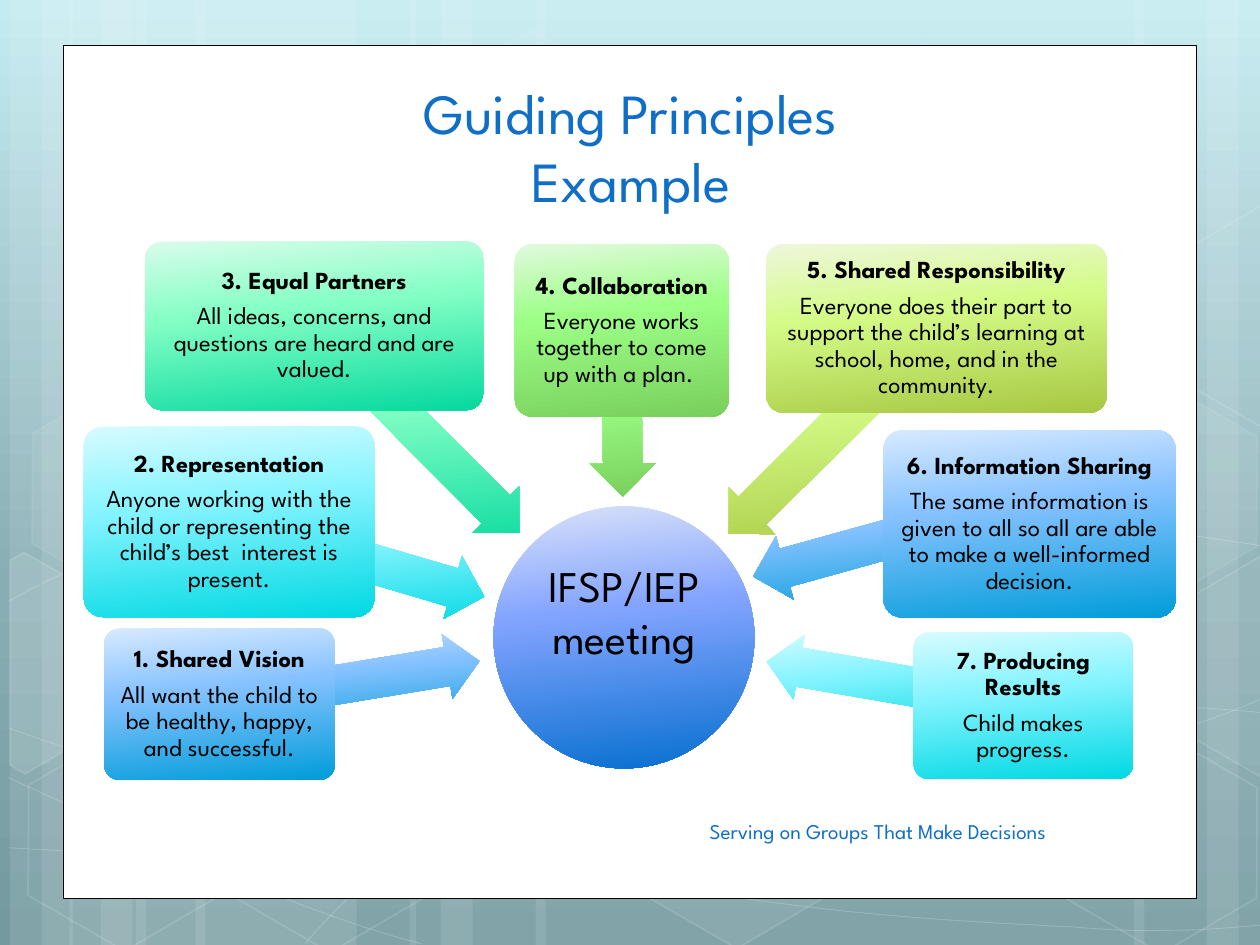
from dataclasses import dataclass
from math import cos, radians, sin

from lxml import etree
from pptx import Presentation
from pptx.dml.color import RGBColor
from pptx.enum.shapes import MSO_SHAPE
from pptx.enum.text import MSO_ANCHOR, MSO_AUTO_SIZE, PP_ALIGN
from pptx.oxml.ns import qn
from pptx.util import Cm, Pt

RECT, ROUND, OVAL = MSO_SHAPE.RECTANGLE, MSO_SHAPE.ROUNDED_RECTANGLE, MSO_SHAPE.OVAL
ARROW, HEX = MSO_SHAPE.LEFT_ARROW, MSO_SHAPE.HEXAGON
MIDDLE, BOTTOM = MSO_ANCHOR.MIDDLE, MSO_ANCHOR.BOTTOM
CENTER, FIXED = PP_ALIGN.CENTER, MSO_AUTO_SIZE.NONE


@dataclass(frozen=True)
class Theme:
    font: str = "League Spartan"
    white: str = "FFFFFF"
    ink: str = "000000"
    accent: str = "0F6FC6"
    sky: tuple = ((0, "C4EBF1"), (62, "88ADB3"), (100, "749AA0"))
    hub: tuple = ((0, "DAE2F9"), (40, "82A4FF"), (100, "066FCF"))
    blue: tuple = ((0, "D7EAFF"), (40, "86C2FF"), (100, "009DD9"))
    aqua: tuple = ((0, "D7FBFF"), (40, "86F4FF"), (100, "01D9E3"))
    mint: tuple = ((0, "D9FCEB"), (40, "84FFC5"), (100, "06D99F"))
    green: tuple = ((0, "E2F9DE"), (40, "9CFF86"), (100, "79CF5D"))
    lime: tuple = ((0, "EEF7DC"), (40, "D4FB87"), (100, "A8C843"))
    title: float = 32.4
    core: float = 25
    body: float = 14
    note: float = 12


T = Theme()
TILT = 30

BARS = [(2.74, 4.45), (0.2, 1.27), (0.84, 2.11), (3.94, 4.45), (1.4, 1.27), (2.03, 2.11),
        (18.62, 4.45), (24.33, 1.27), (22.86, 2.11), (10.8, 7.82), (8.26, 1.27), (8.89, 2.11)]

CURVES = [
    [(0.18, 17.09), (1.55, 17.17), (2.92, 17.25), (4.83, 17.22), (6.73, 17.2), (9.09, 17.15),
     (11.63, 16.89), (14.17, 16.64), (17.78, 16.15), (20.12, 15.67), (22.43, 15.19),
     (24.82, 14.43), (25.58, 14)],
    [(0.18, 12.12), (0.91, 11.71), (1.65, 11.33), (3.07, 10.95), (4.52, 10.57), (6.58, 10.01),
     (8.81, 9.83), (11.07, 9.65), (13.82, 9.63), (16.61, 9.83), (19.41, 10.03),
     (24.05, 10.82), (25.58, 11.02)],
    [(0.15, 15.67), (3.23, 17.07), (6.27, 18.47), (8.48, 19.02)],
    [(0.18, 14.68), (0.97, 14.96), (1.78, 15.24), (3.25, 15.65), (4.72, 16.03), (6.93, 16.66),
     (9.07, 17.09), (11.18, 17.53), (13.84, 17.98), (15.95, 18.24), (18.06, 18.52),
     (20.32, 18.62), (21.67, 18.69), (22.99, 18.8), (23.34, 18.75), (24, 18.75),
     (24.66, 18.72), (25.12, 18.67), (25.58, 18.64)],
    [(6.15, 19.02), (6.6, 18.52), (7.06, 18.01), (7.67, 17.55), (8.28, 17.09), (9.14, 16.59),
     (9.86, 16.23), (10.57, 15.88), (11, 15.72), (11.94, 15.47), (12.85, 15.21),
     (14.55, 14.86), (15.44, 14.68), (16.36, 14.5), (16.48, 14.5), (17.27, 14.45),
     (18.06, 14.38), (19.3, 14.3), (20.17, 14.27), (21.06, 14.25), (22.5, 14.27),
     (22.5, 14.27), (22.5, 14.27), (24.21, 14.27), (24.21, 14.27), (24.66, 14.3),
     (25.1, 14.33), (25.55, 14.38)],
]

CELLS = [(8.48, 0.91, 4, 8), (12.62, 14.96, 6, 12), (0.28, 15.01, 0, 12), (0.36, 7.92, 7, 8),
         (4.42, 15.04, 0, 12), (19.13, 11.51, 10, 12), (21.18, 15.06, 0, 12),
         (21.18, 7.98, 7, 8)]

LEFT = [(0.2, 11.3), (0.48, 11.13), (2.44, 12.24), (2.41, 14.48), (0.51, 15.6), (0.2, 15.42)]
RIGHT = [(23.52, 12.32), (25.43, 11.2), (25.63, 11.33), (25.63, 15.57), (25.45, 15.67),
         (23.52, 14.55)]
CUTS = [(LEFT, (0.91, 13.59), 0, 10), (RIGHT, (25.02, 13.21), 0, 4),
        (RIGHT, (25.02, 13.21), -7.06, 0)]

TOPICS = [
    ("1. Shared Vision", "All want the child to be healthy, happy, and successful.",
     (0.41, 7.8, 4.65, 3.05), (2.7, 8.23, 5.31, 170.6), T.blue),
    ("2. Representation",
     "Anyone working with the child or representing the child’s best  interest is present.",
     (0, 3.73, 5.86, 3.84), (2.82, 5.74, 5.36, 196.4), T.aqua),
    ("3. Equal Partners", "All ideas, concerns, and questions are heard and are valued.",
     (1.24, 0, 6.81, 3.4), (3.77, 3.13, 5.87, 225.1), T.mint),
    ("4. Collaboration", "Everyone works together to come up with a plan. ",
     (8.69, 0.05, 4.31, 3.48), (9.18, 2.8, 3.35, 269.6), T.green),
    ("5. Shared Responsibility",
     "Everyone does their part to support the child’s learning at school, home, "
     "and in the community.",
     (13.76, 0.05, 6.86, 3.4), (12.15, 3.16, 5.89, 315.3), T.lime),
    ("6. Information Sharing",
     "The same information is given to all so all are able to make a well-informed decision.",
     (16.12, 3.8, 5.89, 3.78), (13.4, 5.4, 5.18, 344.5), T.blue),
    ("7. Producing Results", "Child makes progress.",
     (16.73, 7.88, 4.42, 2.95), (13.73, 8.25, 5.23, 9.7), T.aqua),
]


def grade(fill, root, stops, angle):
    fill.gradient()
    node = next(root.iter(qn("a:gradFill")))
    node.set("rotWithShape", "0")
    node.find(qn("a:lin")).set("ang", str(angle * 60000))
    group = node.find(qn("a:gsLst"))
    group.clear()
    for pos, shade in stops:
        stop = etree.SubElement(group, qn("a:gs"), pos=str(pos * 1000))
        etree.SubElement(stop, qn("a:srgbClr"), val=shade)


def tint(shape, fill, pct):
    fill.solid()
    fill.fore_color.rgb = RGBColor.from_string(T.white)
    last = list(shape.element.spPr.iter(qn("a:srgbClr")))[-1]
    etree.SubElement(last, qn("a:alpha"), val=str(pct * 1000))


def veil(shape, fill, line=0, width=1):
    shape.shadow.inherit = False
    for part, pct in ((shape.fill, fill), (shape.line.fill, line)):
        if pct:
            tint(shape, part, pct)
        else:
            part.background()
    if line:
        shape.line.width = Pt(width)


def form(slide, kind, box, stops=None, adjust=()):
    shape = slide.shapes.add_shape(kind, *map(Cm, box))
    shape.shadow.inherit = False
    for i, value in enumerate(adjust):
        shape.adjustments[i] = value
    if stops:
        grade(shape.fill, shape.element.spPr, stops, 84)
        shape.line.fill.background()
    return shape


def trace(slide, points, close):
    start, *rest = [(Cm(x), Cm(y)) for x, y in points]
    pen = slide.shapes.build_freeform(*start)
    pen.add_line_segments(rest, close=close)
    return pen.convert_to_shape()


def curve(slide, points):
    shape = trace(slide, points, False)
    legs = list(shape.element.spPr.iter(qn("a:lnTo")))
    for i in range(0, len(legs), 3):
        bend = etree.Element(qn("a:cubicBezTo"))
        legs[i].addprevious(bend)
        for leg in legs[i:i + 3]:
            bend.append(leg[0])
            leg.getparent().remove(leg)
    return shape


def cut(slide, points, mid):
    c, s = cos(radians(TILT)), sin(radians(TILT))
    flat = [(mid[0] + (x - mid[0]) * c + (y - mid[1]) * s,
             mid[1] + (y - mid[1]) * c - (x - mid[0]) * s) for x, y in points]
    shape = trace(slide, flat, True)
    shape.rotation = TILT
    return shape


def write(frame, lines, size, color, anchor=MIDDLE, inset=None, bold=False):
    frame.word_wrap = True
    frame.auto_size = FIXED
    frame.vertical_anchor = anchor
    if inset is not None:
        frame.margin_left = frame.margin_right = Cm(inset)
        frame.margin_top = frame.margin_bottom = Cm(inset)
    frame.text = "\n".join(lines)
    for i, para in enumerate(frame.paragraphs):
        para.alignment = CENTER
        for run in para.runs:
            run.font.name = T.font
            run.font.size = Pt(size)
            run.font.bold = bold and i == 0
            run.font.color.rgb = RGBColor.from_string(color)


def scene(slide, box):
    left, top, width, height = box
    grade(slide.background.fill, slide.element, T.sky, 90)
    for x, wide in BARS:
        veil(form(slide, RECT, (left + x, top, wide, height)), 10)
    for points in CURVES:
        veil(curve(slide, [(left + x, top + y) for x, y in points]), 0, 20, 0.5)
    for x, y, fill, line in CELLS:
        cell = form(slide, HEX, (left + x, top + y, 4.45, 3.86), adjust=(0.285,))
        cell.rotation = TILT
        veil(cell, fill, line)
    for points, (x, y), drop, fill in CUTS:
        ring = [(left + a, top + b + drop) for a, b in points]
        veil(cut(slide, ring, (left + x, top + y + drop)), fill, 12)


def panel(slide, box):
    left, top = box[:2]
    sheet = form(slide, RECT, box)
    sheet.fill.solid()
    sheet.fill.fore_color.rgb = RGBColor.from_string(T.white)
    sheet.line.color.rgb = RGBColor.from_string(T.ink)
    sheet.line.width = Pt(0.5)
    title = slide.shapes.title
    slide.shapes.element.append(title.element)
    title.left, title.top = Cm(left + 1.69), Cm(top + 0.35)
    title.width, title.height = Cm(19.51), Cm(3.18)
    write(title.text_frame, ["Guiding Principles\vExample"], T.title, T.accent, BOTTOM)
    note = slide.shapes.add_textbox(Cm(left + 11.5), Cm(top + 15.33), Cm(9.86), Cm(1.02))
    write(note.text_frame, ["Serving on Groups That Make Decisions"], T.note, T.accent)


def card(slide, box, head, text, stops):
    shape = form(slide, ROUND, box, stops, (0.1,))
    write(shape.text_frame, [head, text], T.body, T.ink, inset=0.08, bold=True)
    for para in shape.text_frame.paragraphs:
        para.line_spacing = 0.9
        para.space_after = Pt(5)


def wheel(slide, box):
    left, top = box[:2]
    hub = form(slide, OVAL, (left + 8.26, top + 5.34, 5.26, 5.28), T.hub)
    write(hub.text_frame, ["IFSP/IEP meeting"], T.core, T.ink, inset=0.05)
    hub.text_frame.margin_bottom = Cm(1.12)
    for head, text, (x, y, wide, high), (ax, ay, reach, turn), stops in TOPICS:
        arrow = form(slide, ARROW, (left + ax, top + ay, reach, 1.32), stops, (0.6, 0.5))
        arrow.rotation = turn
        card(slide, (left + x, top + y, wide, high), head, text, stops)


def main():
    deck = Presentation()
    deck.slide_width, deck.slide_height = Cm(25.4), Cm(19.05)
    slide = deck.slides.add_slide(deck.slide_layouts[5])
    scene(slide, (0, 0, 25.4, 19.05))
    panel(slide, (1.27, 0.91, 22.86, 17.2))
    wheel(slide, (1.69, 4.87, 22.02, 10.84))
    deck.save("out.pptx")


if __name__ == "__main__":
    main()
